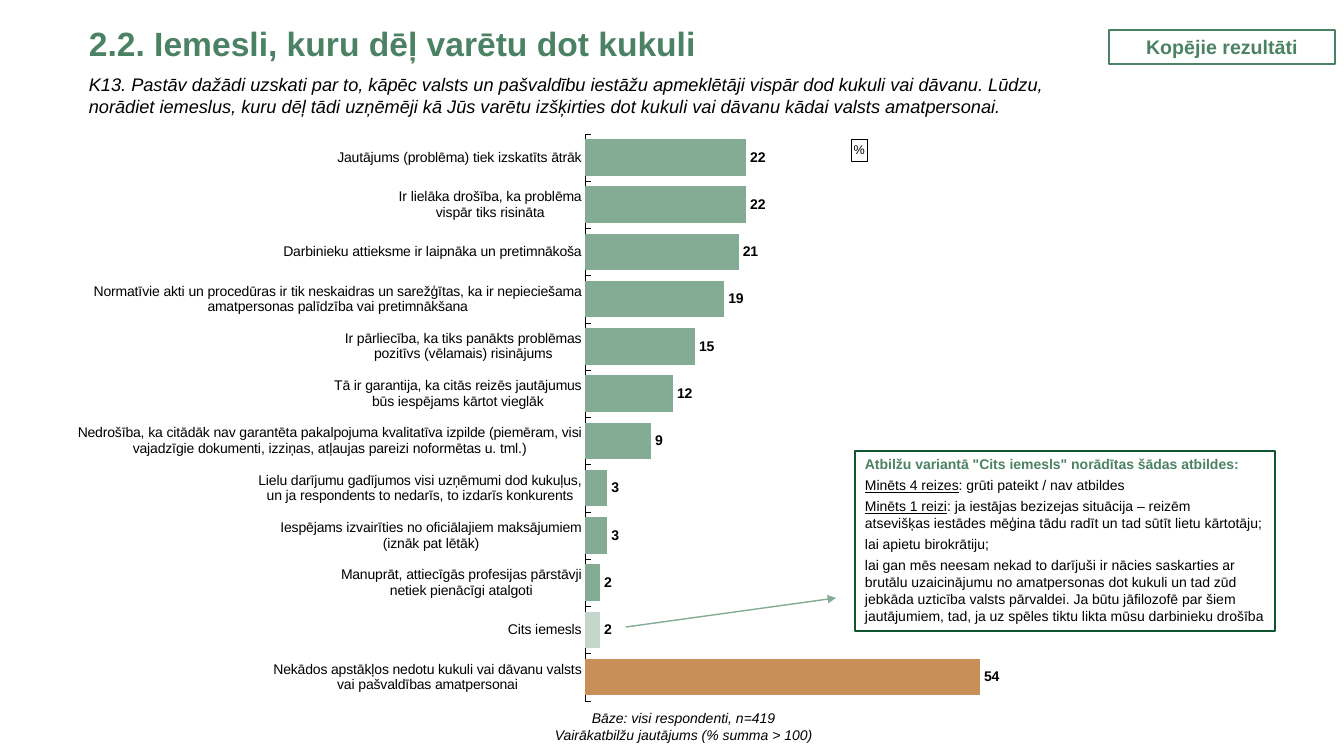
"""Build the slide on reasons for giving a bribe."""
from dataclasses import dataclass

from lxml.etree import SubElement
from pptx import Presentation
from pptx.chart.data import CategoryChartData
from pptx.dml.color import RGBColor
from pptx.enum.chart import XL_CHART_TYPE, XL_LABEL_POSITION, XL_TICK_MARK
from pptx.enum.shapes import MSO_CONNECTOR, MSO_SHAPE
from pptx.enum.text import MSO_ANCHOR, PP_ALIGN
from pptx.oxml import parse_xml
from pptx.oxml.ns import nsdecls, qn
from pptx.util import Emu, Pt

HEADING = "2.2. Iemesli, kuru dēļ varētu dot kukuli"
QUESTION = (
    "K13. Pastāv dažādi uzskati par to, kāpēc valsts un pašvaldību iestāžu apmeklētāji "
    "vispār dod kukuli vai dāvanu. Lūdzu, norādiet iemeslus, kuru dēļ tādi uzņēmēji kā Jūs "
    "varētu izšķirties dot kukuli vai dāvanu kādai valsts amatpersonai."
)
BADGE = "Kopējie rezultāti"
BASE = "Bāze: visi respondenti, n=419\nVairākatbilžu jautājums (% summa > 100)"
UNIT = "%"
OTHER = "Cits iemesls"
NEVER = "Nekādos apstākļos nedotu kukuli vai dāvanu valsts\nvai pašvaldības amatpersonai"
REASONS = [
    ("Jautājums (problēma) tiek izskatīts ātrāk", 22),
    ("Ir lielāka drošība, ka problēma\nvispār tiks risināta", 22),
    ("Darbinieku attieksme ir laipnāka un pretimnākoša", 21),
    ("Normatīvie akti un procedūras ir tik neskaidras un sarežģītas, ka ir nepieciešama "
     "amatpersonas palīdzība vai pretimnākšana", 19),
    ("Ir pārliecība, ka tiks panākts problēmas\npozitīvs (vēlamais) risinājums", 15),
    ("Tā ir garantija, ka citās reizēs jautājumus\nbūs iespējams kārtot vieglāk", 12),
    ("Nedrošība, ka citādāk nav garantēta pakalpojuma kvalitatīva izpilde (piemēram, visi "
     "vajadzīgie dokumenti, izziņas, atļaujas pareizi noformētas u. tml.)", 9),
    ("Lielu darījumu gadījumos visi uzņēmumi dod kukuļus,\n"
     "un ja respondents to nedarīs, to izdarīs konkurents", 3),
    ("Iespējams izvairīties no oficiālajiem maksājumiem\n(iznāk pat lētāk)", 3),
    ("Manuprāt, attiecīgās profesijas pārstāvji\nnetiek pienācīgi atalgoti", 2),
    (OTHER, 2),
    (NEVER, 54),
]
NOTE_HEADING = 'Atbilžu variantā "Cits iemesls" norādītas šādas atbildes:'
NOTE_ANSWERS = [
    ("Minēts 4 reizes", ": grūti pateikt / nav atbildes"),
    ("Minēts 1 reizi", ": ja iestājas bezizejas situācija – reizēm\n"
     "atsevišķas iestādes mēģina tādu radīt un tad sūtīt lietu kārtotāju;"),
    ("", "lai apietu birokrātiju;"),
    ("", "lai gan mēs neesam nekad to darījuši ir nācies saskarties ar brutālu uzaicinājumu "
     "no amatpersonas dot kukuli un tad zūd jebkāda uzticība valsts pārvaldei. Ja būtu "
     "jāfilozofē par šiem jautājumiem, tad, ja uz spēles tiktu likta mūsu darbinieku drošība"),
]


@dataclass(frozen=True)
class Theme:
    """Colours, fonts and type sizes."""
    green: str = "4C8264"
    dark_green: str = "0F552E"
    bar: str = "84AC94"
    pale_bar: str = "C3D6CC"
    orange_bar: str = "C89058"
    black: str = "000000"
    font: str = "Arial"
    chart_font: str = "Calibri"
    heading: int = 24
    badge: int = 14
    question: int = 13
    body: int = 10
    unit: int = 9


THEME = Theme()


def px(length):
    """Turn pixels into EMU."""
    return Emu(round(length * 914400 / 100.8))


def box(*lengths):
    """Turn left, top, width and height into EMU."""
    return [px(length) for length in lengths]


def rgb(colour):
    """Make a colour from its hex code."""
    return RGBColor.from_string(colour)


def style(font, size, colour=THEME.black, name=THEME.font, **flags):
    """Set size, colour, typeface and flags of a font."""
    font.size, font.name, font.color.rgb = Pt(size), name, rgb(colour)
    for flag, value in flags.items():
        setattr(font, flag, value)


def write(paragraph, text, size, colour=THEME.black, **flags):
    """Add text to a paragraph, one run for each line."""
    for number, line in enumerate(text.split("\n")):
        if number:
            paragraph.add_line_break()
        run = paragraph.add_run()
        run.text = line
        style(run.font, size, colour, **flags)


def text_box(slide, place, anchor=MSO_ANCHOR.TOP):
    """Add a wrapping text box and return its first paragraph."""
    frame = slide.shapes.add_textbox(*box(*place)).text_frame
    frame.word_wrap, frame.vertical_anchor = True, anchor
    return frame.paragraphs[0]


def outlined_box(slide, place, colour, weight, anchor):
    """Add an unfilled rectangle and return its text frame."""
    rectangle = slide.shapes.add_shape(MSO_SHAPE.RECTANGLE, *box(*place))
    rectangle.shadow.inherit = False
    rectangle.fill.background()
    rectangle.line.color.rgb, rectangle.line.width = rgb(colour), Pt(weight)
    frame = rectangle.text_frame
    frame.word_wrap, frame.vertical_anchor = True, anchor
    return frame


def lay_out(parent, index, **settings):
    """Give a chart part a manual layout."""
    for old in parent.findall(qn("c:layout")):
        parent.remove(old)
    layout = parse_xml(f"<c:layout {nsdecls('c')}><c:manualLayout/></c:layout>")
    for name, value in settings.items():
        SubElement(layout[0], qn(f"c:{name}"), val=str(value))
    parent.insert(index, layout)


def add_reasons_chart(slide):
    """Add the bar chart of reasons."""
    data = CategoryChartData(number_format="0")
    data.categories = [reason for reason, _ in REASONS]
    data.add_series("Series 1", [share for _, share in REASONS])
    chart = slide.shapes.add_chart(
        XL_CHART_TYPE.BAR_CLUSTERED, *box(51, 128, 1026, 584), data).chart
    style(chart.font, THEME.body, name=THEME.chart_font)
    chart.has_legend = False
    chart.has_title = True
    unit = chart.chart_title
    write(unit.text_frame.paragraphs[0], UNIT, THEME.unit, bold=False)
    unit.format.line.color.rgb, unit.format.line.width = rgb(THEME.black), Pt(0.75)
    lay_out(unit._element, 1, xMode="edge", yMode="edge", x=0.78, y=0.02)
    lay_out(chart._chartSpace.chart.plotArea, 0, layoutTarget="inner",
            xMode="edge", yMode="edge", x=0.521, y=0.01, w=0.463, h=0.971)

    reasons, shares = chart.category_axis, chart.value_axis
    reasons.reverse_order = True
    reasons.major_tick_mark, reasons.minor_tick_mark = XL_TICK_MARK.INSIDE, XL_TICK_MARK.NONE
    reasons.format.line.color.rgb, reasons.format.line.width = rgb(THEME.black), Pt(0.25)
    style(reasons.tick_labels.font, THEME.body)
    shares.minimum_scale, shares.maximum_scale = 0, 65
    shares.has_major_gridlines = shares.visible = False

    plot = chart.plots[0]
    plot.gap_width, plot.vary_by_categories = 30, False
    bars = plot.series[0]
    bars.format.fill.solid()
    bars.format.fill.fore_color.rgb = rgb(THEME.bar)
    special = {OTHER: THEME.pale_bar, NEVER: THEME.orange_bar}
    for number, (reason, _) in enumerate(REASONS):
        if reason in special:
            fill = bars.points[number].format.fill
            fill.solid()
            fill.fore_color.rgb = rgb(special[reason])
    labels = bars.data_labels
    labels.show_value, labels.position = True, XL_LABEL_POSITION.OUTSIDE_END
    labels.number_format, labels.number_format_is_linked = "0", False
    style(labels.font, THEME.body, bold=True)


def add_note(slide):
    """Add the list of other answers and the arrow to it."""
    arrow = slide.shapes.add_connector(MSO_CONNECTOR.STRAIGHT, *box(626, 627, 836, 598))
    arrow.line.color.rgb, arrow.line.width = rgb(THEME.bar), Pt(1)
    SubElement(arrow.line._get_or_add_ln(), qn("a:tailEnd"), type="triangle")
    SubElement(arrow._element.spPr, qn("a:effectLst"))

    frame = outlined_box(slide, (855, 451, 420, 180), THEME.dark_green, 1, MSO_ANCHOR.TOP)
    write(frame.paragraphs[0], NOTE_HEADING, THEME.body, THEME.green, bold=True)
    for mention, answer in NOTE_ANSWERS:
        paragraph = frame.add_paragraph()
        if mention:
            write(paragraph, mention, THEME.body, underline=True)
        write(paragraph, answer, THEME.body)
    for paragraph in frame.paragraphs:
        paragraph.alignment, paragraph.space_after = PP_ALIGN.LEFT, Pt(3)


def main():
    """Put the slide together and save it."""
    deck = Presentation()
    deck.slide_width, deck.slide_height = px(1344), px(756)
    slide = deck.slides.add_slide(deck.slide_layouts[6])
    add_reasons_chart(slide)
    heading = text_box(slide, (79, 3, 1030, 88), MSO_ANCHOR.MIDDLE)
    heading.line_spacing = 0.8
    write(heading, HEADING, THEME.heading, THEME.green, bold=True)
    write(text_box(slide, (79, 68, 1030, 54)), QUESTION, THEME.question, italic=True)
    base = text_box(slide, (524, 704, 319, 44), MSO_ANCHOR.MIDDLE)
    base.alignment = PP_ALIGN.CENTER
    write(base, BASE, THEME.body, italic=True)
    badge = outlined_box(slide, (1109, 30, 226, 34), THEME.green, 1.5, MSO_ANCHOR.MIDDLE)
    badge.paragraphs[0].alignment = PP_ALIGN.CENTER
    write(badge.paragraphs[0], BADGE, THEME.badge, THEME.green, bold=True)
    add_note(slide)
    deck.save("out.pptx")


if __name__ == "__main__":
    main()
